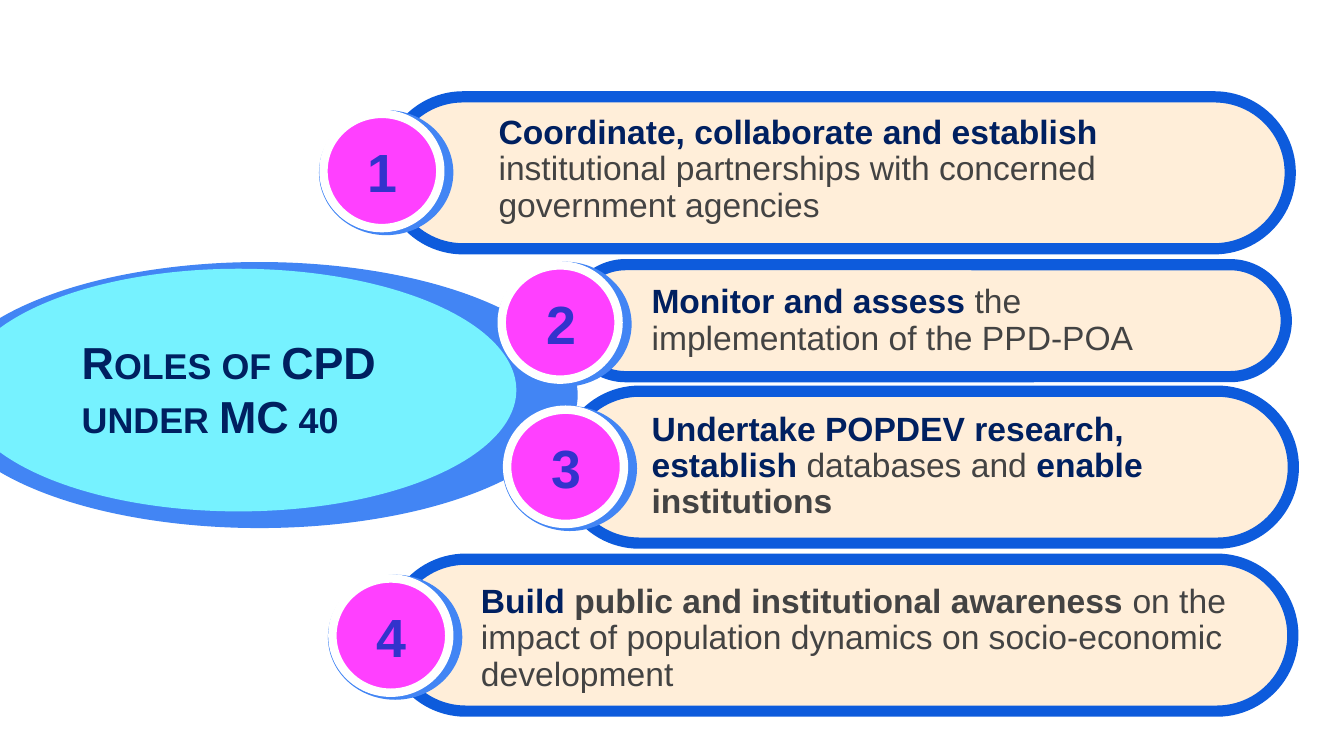
from pptx import Presentation
from pptx.dml.color import RGBColor
from pptx.enum.shapes import MSO_SHAPE
from pptx.enum.text import MSO_AUTO_SIZE, PP_ALIGN
from pptx.util import Pt

ELLIPSE = MSO_SHAPE.OVAL
PILL = MSO_SHAPE.ROUNDED_RECTANGLE
GROW = MSO_AUTO_SIZE.SHAPE_TO_FIT_TEXT
CENTER = PP_ALIGN.CENTER
NAVY, GREY, BLUE = "002060", "434343", "4285F4"


def add_shape(kind, box, fill, line=None, weight=0):
    sp = s.shapes.add_shape(kind, *map(Pt, box))
    sp.shadow.inherit = False
    sp.fill.solid()
    sp.fill.fore_color.rgb = RGBColor.from_string(fill)
    if line:
        sp.line.color.rgb = RGBColor.from_string(line)
        sp.line.width = Pt(weight)
    else:
        sp.line.fill.background()
    return sp


def add_text(box, runs, size, small_caps=False):
    tf = s.shapes.add_textbox(*map(Pt, box)).text_frame
    tf.word_wrap = True
    tf.auto_size = GROW
    p = tf.paragraphs[0]
    for text, color, bold in runs:
        r = p.add_run()
        r.text = text
        r.font.name = "Arial"
        r.font.size = Pt(size)
        r.font.bold = bold
        r.font.color.rgb = RGBColor.from_string(color)
        if small_caps:
            r._r.get_or_add_rPr().set("cap", "small")
    return p


prs = Presentation()
prs.slide_width, prs.slide_height = Pt(720), Pt(405)
s = prs.slides.add_slide(prs.slide_layouts[6])

# Title ellipse
add_shape(ELLIPSE, (-31.5, 140.4, 341, 142.5), BLUE)
add_shape(ELLIPSE, (-21, 144, 297.6, 130), "76F2FF")
add_text((36.7, 175.7, 206.6, 65.5),
         [("Roles of CPD under MC 40", NAVY, True)], 24, True)

# Roles: pill box, text box, top left of the number badge, runs
roles = [
    ((207.4, 51.9, 483.8, 81.4), (260, 58.3, 416.9, 67), (170.9, 59),
     [("Coordinate, collaborate and establish ", NAVY, True),
      ("institutional partnerships with concerned government agencies",
       GREY, False)]),
    ((305.3, 141.8, 383.8, 60), (342, 149, 324, 46.8), (266.4, 140.2),
     [("Monitor and assess ", NAVY, True),
      ("the implementation of the PPD-POA", GREY, False)]),
    ((301.9, 209.6, 391, 81.4), (342, 217.4, 324, 67), (269.3, 217.5),
     [("Undertake POPDEV research, establish ", NAVY, True),
      ("databases and ", GREY, False),
      ("enable ", NAVY, True),
      ("institutions", GREY, True)]),
    ((208.8, 299.6, 483.8, 81.4), (250.6, 309.6, 415.4, 67), (175.7, 307.9),
     [("Build ", NAVY, True),
      ("public and institutional awareness ", GREY, True),
      ("on the impact of population dynamics on socio-economic development",
       GREY, False)]),
]
for pill, text_box, badge, runs in roles:
    sp = add_shape(PILL, pill, "FFEED9", "0D5BDC", 6)
    sp.adjustments[0] = 0.5
    add_text(text_box, runs, 18).line_spacing = 0.9

# Number badges, on top of the pills
for number, (pill, text_box, (x, y), runs) in enumerate(roles, 1):
    add_shape(ELLIPSE, (x, y, 72, 67), BLUE)
    add_shape(ELLIPSE, (x + 2.4, y + 2, 62.6, 61.2), "FF40FF", "FFFFFF", 4.5)
    p = add_text((x + 5, y + 4.6, 58.3, 51),
                 [(str(number), "3333CC", True)], 36, True)
    p.alignment = CENTER

prs.save("out.pptx")
